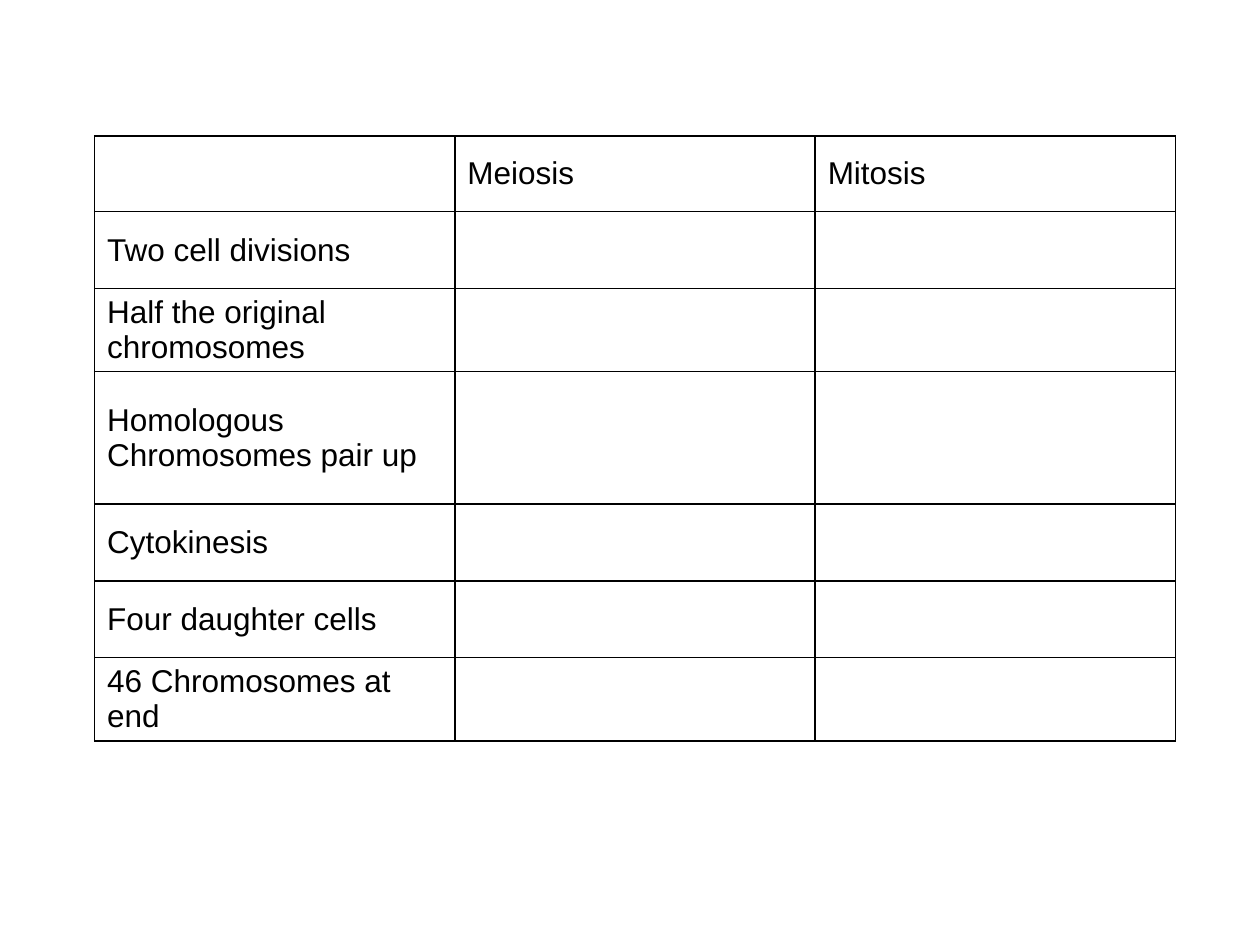
"""Build a slide with a blank comparison table of meiosis and mitosis."""
import pptx
import pptx.dml.color
import pptx.enum.text
import pptx.oxml
import pptx.oxml.ns
import pptx.util
from pptx.util import Inches

COLORS = {"ink": "000000", "paper": "FFFFFF"}
HEADERS = ["", "Meiosis", "Mitosis"]
ROWS = [
    ("Two cell divisions", 0.61),
    ("Half the original chromosomes", 0.61),
    ("Homologous Chromosomes pair up", 1.05),
    ("Cytokinesis", 0.61),
    ("Four daughter cells", 0.61),
    ("46 Chromosomes at end", 0.61),
]


def add_borders(cell):
    """Draw a thin line on all four sides of a cell."""
    tcPr = cell._tc.get_or_add_tcPr()
    for i, side in enumerate(("lnL", "lnR", "lnT", "lnB")):
        tcPr.insert(i, pptx.oxml.parse_xml(
            f'<a:{side} {pptx.oxml.ns.nsdecls("a")} w="12700"><a:solidFill>'
            f'<a:srgbClr val="{COLORS["ink"]}"/></a:solidFill></a:{side}>'))


prs = pptx.Presentation()
prs.slide_width, prs.slide_height = Inches(10), Inches(7.5)
s = prs.slides.add_slide(prs.slide_layouts[6])

grid = [HEADERS] + [[label, "", ""] for label, _ in ROWS]
heights = [0.6] + [height for _, height in ROWS]
sp = s.shapes.add_table(len(grid), len(HEADERS), Inches(0.75), Inches(1.08),
                        Inches(8.58), Inches(sum(heights)))
table = sp.table
table.first_row = table.horz_banding = False
for column in table.columns:
    column.width = Inches(2.86)

for row, height, texts in zip(table.rows, heights, grid):
    row.height = Inches(height)
    for cell, text in zip(row.cells, texts):
        cell.fill.solid()
        cell.fill.fore_color.rgb = pptx.dml.color.RGBColor.from_string(COLORS["paper"])
        cell.vertical_anchor = pptx.enum.text.MSO_ANCHOR.MIDDLE
        add_borders(cell)
        if text:
            r = cell.text_frame.paragraphs[0].add_run()
            r.text = text
            r.font.name = "Arial"
            r.font.size = pptx.util.Pt(18)
            r.font.color.rgb = pptx.dml.color.RGBColor.from_string(COLORS["ink"])

prs.save("out.pptx")
